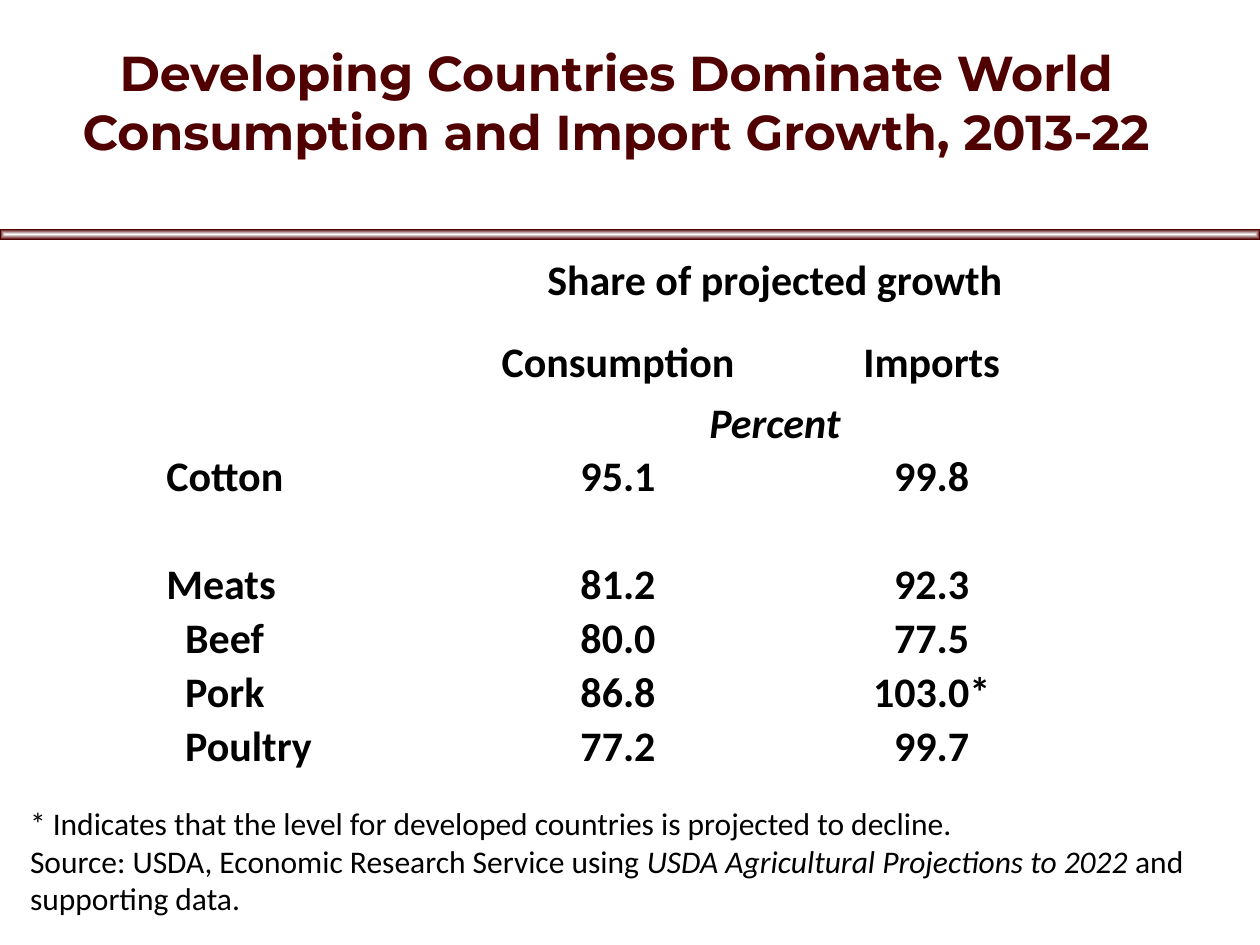
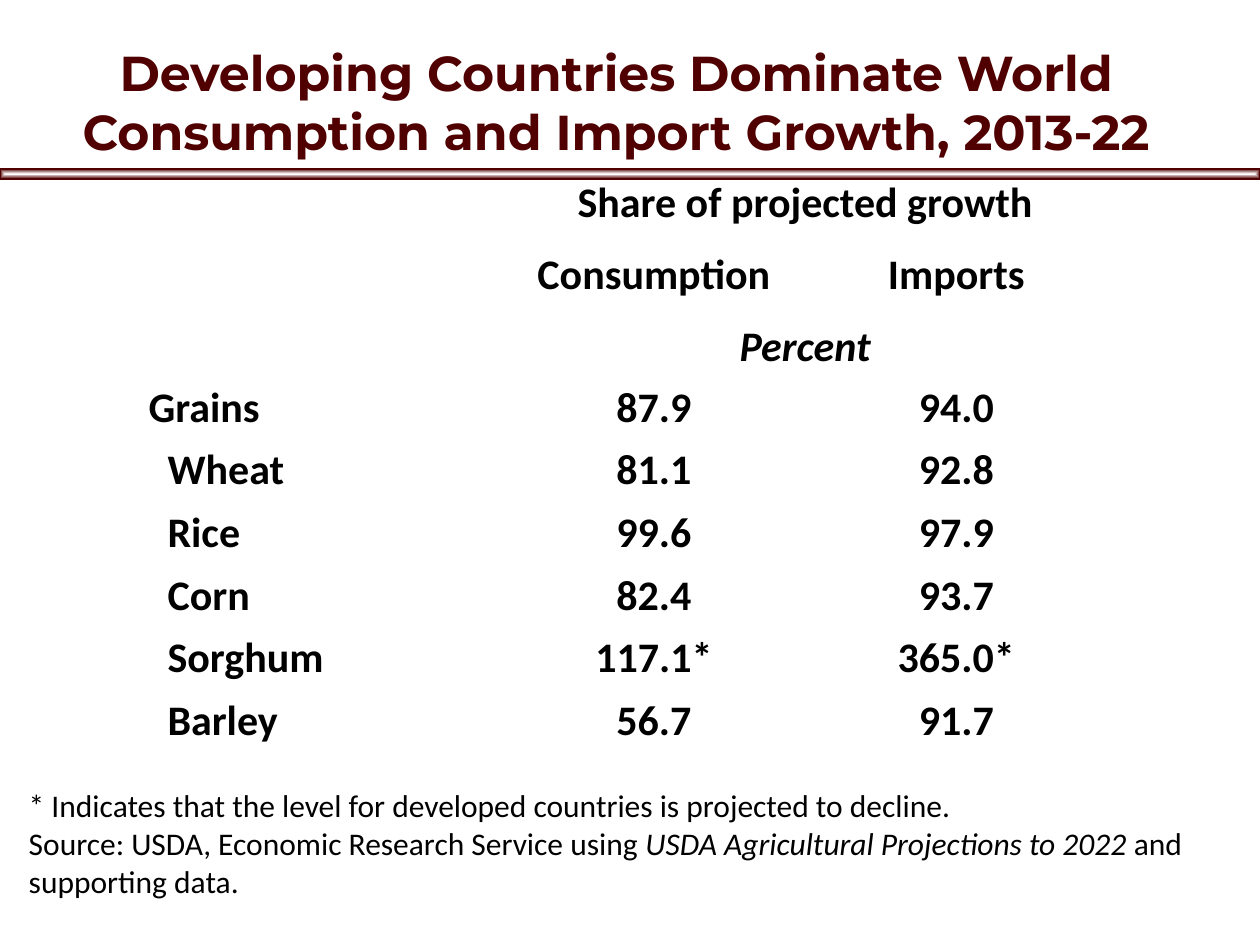
import dataclasses

import pptx
import pptx.dml.color
import pptx.enum.shapes
import pptx.enum.text
import pptx.oxml
import pptx.oxml.ns
import pptx.util

ALIGN = pptx.enum.text.PP_ALIGN
ANCHOR = pptx.enum.text.MSO_ANCHOR


@dataclasses.dataclass(frozen=True)
class Theme:
    """Colours, fonts, type sizes and the 100 by 75 grid of the slides."""
    maroon: str = "500000"
    white: str = "FFFFFF"
    black: str = "000000"
    heading_font: str = "Montserrat"
    body_font: str = "Calibri"
    title_size: int = 28
    table_size: int = 24
    note_size: int = 18
    columns: int = 100
    rows: int = 75
    cell: int = pptx.util.Inches(0.1)
    child_indent: float = 1.5


THEME = Theme()
TITLE = "Developing Countries Dominate World Consumption and Import Growth, 2013-22"
NOTE = [
    ["* Indicates that the level for developed countries is projected to decline."],
    ["Source: USDA, Economic Research Service using ",
     ("USDA Agricultural Projections to 2022", True),
     " and supporting data."],
]
HEADINGS = [("", "Share of projected growth"), ("", "Consumption", "Imports"), ("", "Percent")]
COTTON_AND_MEATS = [
    ("Cotton", "95.1", "99.8"),
    ("", "", ""),
    ("Meats", "81.2", "92.3"),
    ("Beef", "80.0", "77.5"),
    ("Pork", "86.8", "103.0*"),
    ("Poultry", "77.2", "99.7"),
]
GRAINS = [
    ("Grains", "87.9", "94.0"),
    ("Wheat", "81.1", "92.8"),
    ("Rice", "99.6", "97.9"),
    ("Corn", "82.4", "93.7"),
    ("Sorghum", "117.1*", "365.0*"),
    ("Barley", "56.7", "91.7"),
]
GROUPS = {"", "Cotton", "Meats", "Grains"}


def grid(*steps):
    """Turn grid steps into slide lengths."""
    return [pptx.util.Emu(round(step * THEME.cell)) for step in steps]


def rgb(code):
    """Turn a hex code into a colour."""
    return pptx.dml.color.RGBColor.from_string(code)


def write(frame, lines, size, font=THEME.body_font, color=THEME.black,
          bold=False, italic=False, align=ALIGN.LEFT):
    """Fill a text frame with lines of runs, where a pair gives a run its own italic."""
    for index, line in enumerate(lines):
        paragraph = frame.add_paragraph() if index else frame.paragraphs[0]
        paragraph.alignment = align
        for part in line:
            words, slanted = part if isinstance(part, tuple) else (part, italic)
            run = paragraph.add_run()
            run.text = words
            run.font.name = font
            run.font.size = pptx.util.Pt(size)
            run.font.bold = bold
            run.font.italic = slanted
            run.font.color.rgb = rgb(color)


def add_text(slide, area, lines, anchor=ANCHOR.TOP, **style):
    """Place wrapped text in an area of the grid."""
    frame = slide.shapes.add_textbox(*grid(*area)).text_frame
    frame.word_wrap = True
    frame.vertical_anchor = anchor
    write(frame, lines, **style)


def add_title(slide):
    """Add the shared two-line heading."""
    add_text(slide, (1.4, 0, 95, 16.1), [[TITLE]], anchor=ANCHOR.MIDDLE,
             size=THEME.title_size, font=THEME.heading_font,
             color=THEME.maroon, bold=True, align=ALIGN.CENTER)


def add_band(slide, top):
    """Draw the full-width band that glows white from its middle."""
    band = slide.shapes.add_shape(pptx.enum.shapes.MSO_SHAPE.RECTANGLE,
                                  *grid(0, top, THEME.columns, 0.8))
    band.shadow.inherit = False
    band.line.color.rgb = rgb(THEME.maroon)
    band.line.width = pptx.util.Pt(0.75)
    band.fill.gradient()
    for stop, position, color in zip(band.fill.gradient_stops, (0, 1),
                                     (THEME.white, THEME.maroon)):
        stop.position = position
        stop.color.rgb = rgb(color)
    gradient = band._element.spPr.find(pptx.oxml.ns.qn("a:gradFill"))
    direction = gradient.find(pptx.oxml.ns.qn("a:lin"))
    gradient.replace(direction, pptx.oxml.parse_xml(
        f'<a:path {pptx.oxml.ns.nsdecls("a")} path="shape">'
        '<a:fillToRect l="50000" t="50000" r="50000" b="50000"/></a:path>'))


def add_growth_table(slide, corner, widths, heights, inset, commodities):
    """Add the shares of growth under their three heading rows."""
    content = HEADINGS + commodities
    table = slide.shapes.add_table(len(content), len(widths),
                                   *grid(*corner, sum(widths), sum(heights))).table
    table.first_row = table.horz_banding = False
    for column, width in zip(table.columns, grid(*widths)):
        column.width = width
    for row, height in zip(table.rows, grid(*heights)):
        row.height = height
    side, edge = inset
    for cell in table.iter_cells():
        cell.fill.background()
        cell.vertical_anchor = ANCHOR.MIDDLE
        cell.margin_left, cell.margin_right = grid(side, side)
        cell.margin_top, cell.margin_bottom = grid(edge, edge)
    for r, entries in enumerate(content):
        if len(entries) == 2:
            table.cell(r, 1).merge(table.cell(r, 2))
        if entries[0] not in GROUPS:
            table.cell(r, 0).margin_left = grid(side + THEME.child_indent)[0]
        for c, entry in enumerate(entries):
            if entry:
                write(table.cell(r, c).text_frame, [[entry]], THEME.table_size,
                      bold=True, italic=entry == "Percent",
                      align=ALIGN.CENTER if c else ALIGN.LEFT)


def add_growth_slide(deck, band_top, note_corner, **table):
    """Add one slide with its table, note, heading and band."""
    slide = deck.slides.add_slide(deck.slide_layouts[6])
    add_growth_table(slide, **table)
    add_text(slide, (*note_corner, 96.7, 10.1), NOTE, size=THEME.note_size)
    add_band(slide, band_top)
    add_title(slide)


def main():
    """Build and save both slides."""
    deck = pptx.Presentation()
    deck.slide_width, deck.slide_height = grid(THEME.columns, THEME.rows)
    add_growth_slide(deck, 18.2, (1.4, 63.3), corner=(13, 18.6),
                     widths=[23.6, 24.9, 24.9], heights=[7.5, 5.4] + [4.28] * 7,
                     inset=(0.2, 0.1), commodities=COTTON_AND_MEATS)
    add_growth_slide(deck, 13.4, (1.3, 61.9), corner=(11.3, 13.8),
                     widths=[28.6, 24, 24], heights=[4.7, 6.7, 4.7] + [4.97] * 6,
                     inset=(0.5, 0.3), commodities=GRAINS)
    deck.save("out.pptx")


if __name__ == "__main__":
    main()
